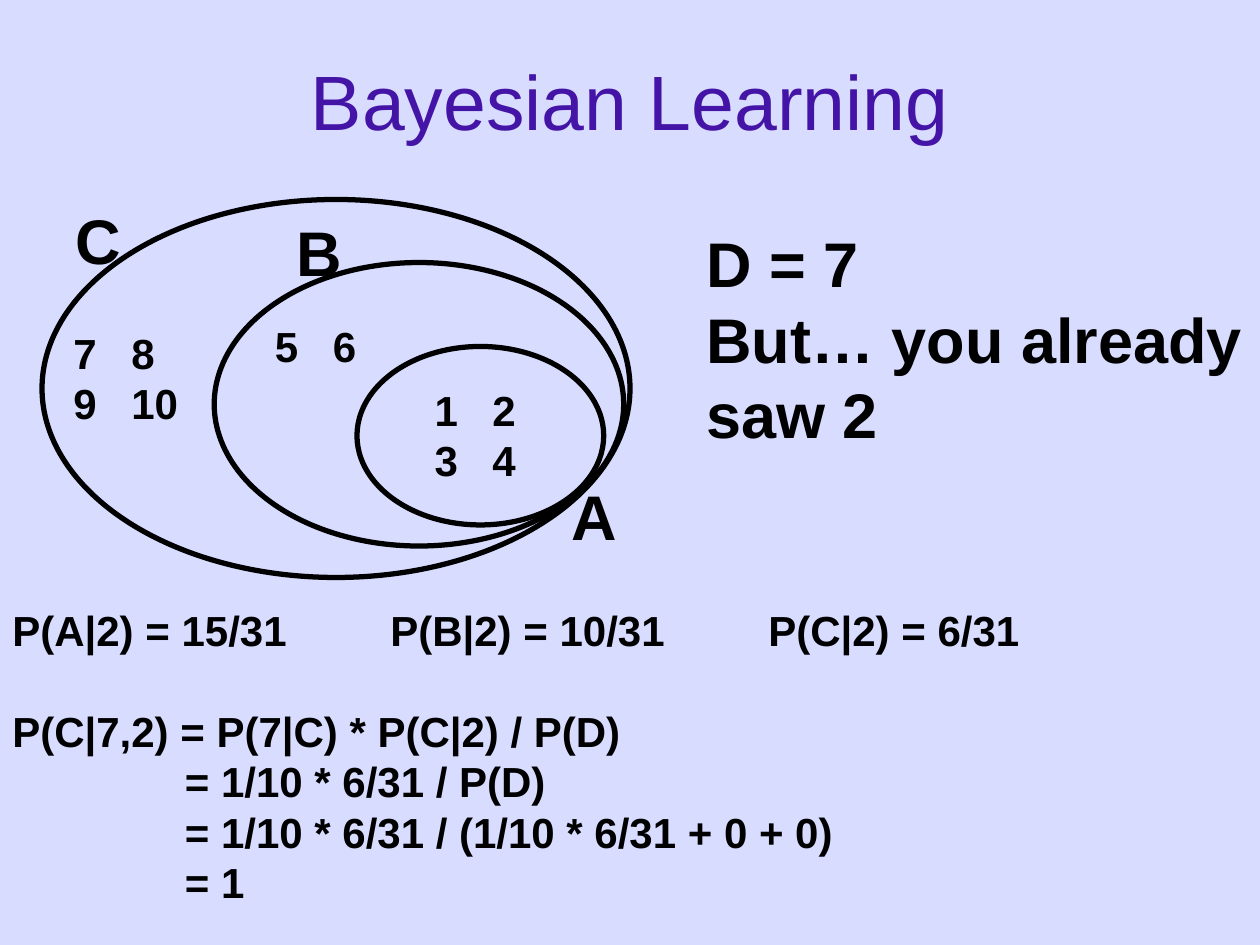
import pptx
import pptx.util
import pptx.dml.color
import pptx.enum.shapes
import pptx.enum.text
import pptx.oxml

COLORS = {"background": "D8DCFF", "title": "4414A7", "ink": "000000"}
FONT = "Arial"
BODY, LARGE = 24, 36
LINE_PITCH = 1.2  # line distance as a multiple of the text size
COLUMNS, ROWS = 120, 90
SLIDE_WIDTH = pptx.util.Inches(10)
SLIDE_HEIGHT = pptx.util.Inches(7.5)


def color(name):
    return pptx.dml.color.RGBColor.from_string(COLORS[name])


def place(left, top, width, height):
    """Turn grid columns and rows into slide lengths."""
    column, row = SLIDE_WIDTH / COLUMNS, SLIDE_HEIGHT / ROWS
    return [round(n) for n in (left * column, top * row, width * column, height * row)]


def set_tabs(paragraph, stops):
    properties = paragraph._p.get_or_add_pPr()
    tab_list = pptx.oxml.parse_xml(
        '<a:tabLst xmlns:a="http://schemas.openxmlformats.org/drawingml/2006/main">'
        + "".join(f'<a:tab pos="{pptx.util.Inches(stop)}" algn="l"/>' for stop in stops)
        + "</a:tabLst>")
    properties.append(tab_list)


def add_text(slide, box, lines, size, tabs=()):
    frame = slide.shapes.add_textbox(*place(*box)).text_frame
    frame.word_wrap = True
    frame.auto_size = pptx.enum.text.MSO_AUTO_SIZE.SHAPE_TO_FIT_TEXT
    for index, line in enumerate(lines):
        paragraph = frame.paragraphs[0] if index == 0 else frame.add_paragraph()
        paragraph.line_spacing = pptx.util.Pt(size * LINE_PITCH)
        if tabs:
            set_tabs(paragraph, tabs)
        run = paragraph.add_run()
        run.text = line
        run.font.name = FONT
        run.font.size = pptx.util.Pt(size)
        run.font.bold = True
        run.font.color.rgb = color("ink")
    return frame


def add_title(slide, box):
    frame = slide.shapes.add_textbox(*place(*box)).text_frame
    frame.word_wrap = True
    frame.vertical_anchor = pptx.enum.text.MSO_ANCHOR.MIDDLE
    heading = frame.paragraphs[0]
    heading.alignment = pptx.enum.text.PP_ALIGN.CENTER
    run = heading.add_run()
    run.text = "Bayesian Learning"
    run.font.name = FONT
    run.font.size = pptx.util.Pt(44)
    run.font.color.rgb = color("title")


def add_nested_sets(slide, box):
    left, top, width, height = box

    # Outlines of C, B and A, from the outside in
    for x, y, w, h in [(0, 0, width, height), (16.4, 6, 39, 27), (30, 14, 23.5, 17)]:
        outline = slide.shapes.add_shape(
            pptx.enum.shapes.MSO_SHAPE.OVAL, *place(left + x, top + y, w, h))
        outline.shadow.inherit = False
        outline.fill.background()
        outline.line.color.rgb = color("ink")
        outline.line.width = pptx.util.Pt(3)

    # Members of each set
    members = [(36.2, 17, ["1\t2", "3\t4"]),
               (1.8, 11.6, ["7\t8", "9\t10"]),
               (21, 10.9, ["5\t6"])]
    for x, y, numbers in members:
        add_text(slide, (left + x, top + y, 26, 1 + 5 * len(numbers)),
                 numbers, BODY, tabs=[0.46])

    # Names of the sets
    for x, y, name in [(49.2, 25.9, "A"), (23.1, 0.7, "B"), (2, -0.4, "C")]:
        add_text(slide, (left + x, top + y, 26, 8.5), [name], LARGE)


def add_observation(slide, box):
    add_text(slide, box, ["D = 7", "But… you already saw 2"], LARGE)


def add_calculation(slide, box):
    lines = ["P(A|2) = 15/31\tP(B|2) = 10/31\tP(C|2) = 6/31",
             "P(C|7,2) = P(7|C) * P(C|2) / P(D)",
             "= 1/10 * 6/31 / P(D)",
             "= 1/10 * 6/31 / (1/10 * 6/31 + 0 + 0)",
             "= 1"]
    priors, posterior, *steps = add_text(slide, box, lines, BODY, tabs=[3, 6]).paragraphs
    posterior.space_before = pptx.util.Pt(BODY * LINE_PITCH)
    for step in steps:
        indent = step._p.get_or_add_pPr()
        indent.set("marL", str(pptx.util.Inches(1.37)))
        indent.set("indent", "0")


def main():
    deck = pptx.Presentation()
    deck.slide_width, deck.slide_height = SLIDE_WIDTH, SLIDE_HEIGHT
    slide = deck.slides.add_slide(deck.slide_layouts[6])
    slide.background.fill.solid()
    slide.background.fill.fore_color.rgb = color("background")

    add_title(slide, (9, 2, 102, 15))
    add_nested_sets(slide, (4, 19, 56, 36))
    add_observation(slide, (66.1, 20.8, 55.8, 23))
    add_calculation(slide, (0, 57, COLUMNS, 30.2))
    deck.save("out.pptx")


if __name__ == "__main__":
    main()
